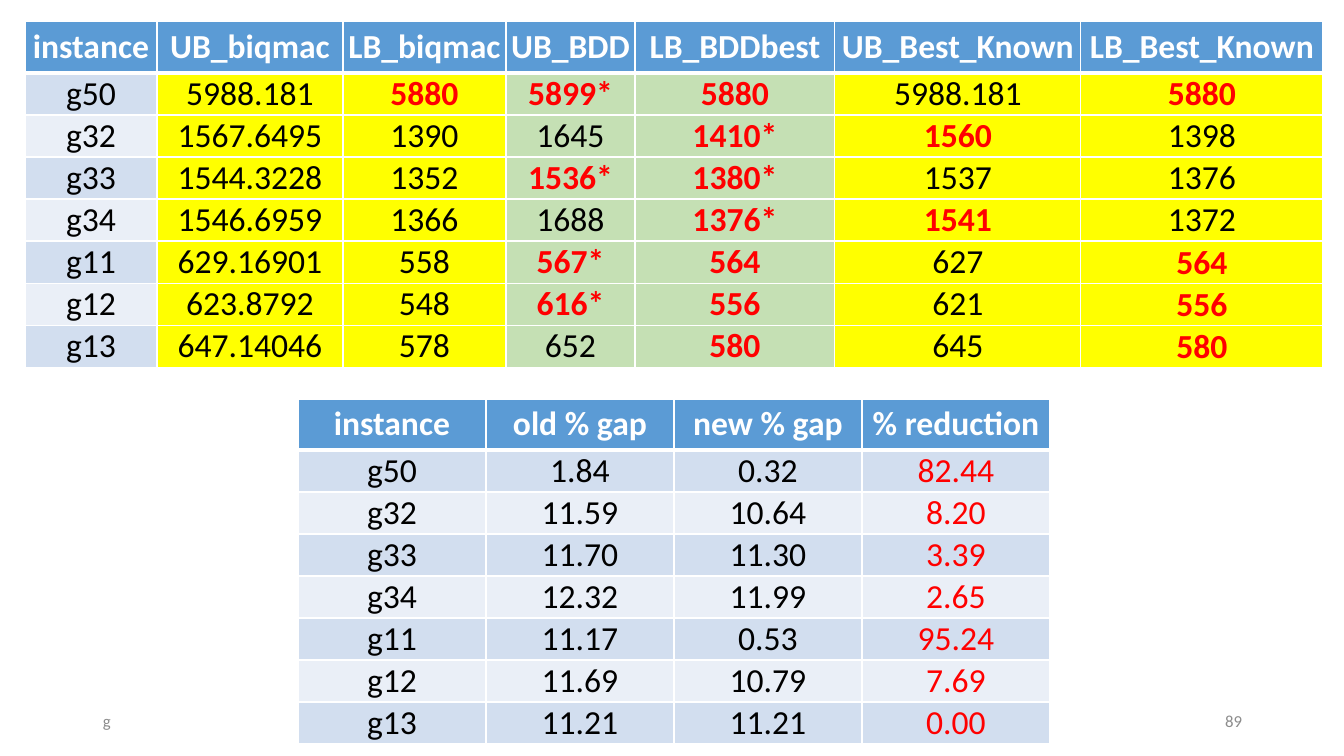
from dataclasses import dataclass

from lxml.etree import SubElement
from pptx import Presentation
from pptx.dml.color import RGBColor
from pptx.enum.text import MSO_ANCHOR, PP_ALIGN
from pptx.oxml.ns import qn
from pptx.util import Pt

# Each row: its values, then the columns that hold a best bound
BOUNDS_HEADER = ["instance", "UB_biqmac", "LB_biqmac", "UB_BDD", "LB_BDDbest",
                 "UB_Best_Known", "LB_Best_Known"]
BOUNDS = [
    (["g50", "5988.181", "5880", "5899*", "5880", "5988.181", "5880"], {2, 3, 4, 6}),
    (["g32", "1567.6495", "1390", "1645", "1410*", "1560", "1398"], {4, 5}),
    (["g33", "1544.3228", "1352", "1536*", "1380*", "1537", "1376"], {3, 4}),
    (["g34", "1546.6959", "1366", "1688", "1376*", "1541", "1372"], {4, 5}),
    (["g11", "629.16901", "558", "567*", "564", "627", "564"], {3, 4, 6}),
    (["g12", "623.8792", "548", "616*", "556", "621", "556"], {3, 4, 6}),
    (["g13", "647.14046", "578", "652", "580", "645", "580"], {4, 6}),
]
GAPS_HEADER = ["instance", "old % gap", "new % gap", "% reduction"]
GAPS = [
    ["g50", "1.84", "0.32", "82.44"],
    ["g32", "11.59", "10.64", "8.20"],
    ["g33", "11.70", "11.30", "3.39"],
    ["g34", "12.32", "11.99", "2.65"],
    ["g11", "11.17", "0.53", "95.24"],
    ["g12", "11.69", "10.79", "7.69"],
    ["g13", "11.21", "11.21", "0.00"],
]
FOOTERS = [("g", 93, PP_ALIGN.LEFT), ("89", 950, PP_ALIGN.RIGHT)]

SLIDE_SIZE = (1344, 756)
BOUNDS_COLUMNS = [132, 186, 163, 129, 200, 246, 242]
GAPS_COLUMNS = [188] * 4
ROW_HEIGHT = 42


@dataclass(frozen=True)
class Theme:
    font: str = "Calibri"
    table_size: int = 24
    footer_size: int = 12
    header: str = "5B9BD5"
    bands: tuple = ("D2DEEF", "EAEFF7")
    known: str = "FFFF00"
    bdd: str = "C5E0B4"
    light: str = "FFFFFF"
    dark: str = "000000"
    best: str = "FF0000"
    footer: str = "8C8C8C"


THEME = Theme()


def px(length):
    return round(length * 914400 / 100.8)


def write(frame, text, size, color, align, bold=False):
    paragraph = frame.paragraphs[0]
    paragraph.alignment = align
    run = paragraph.add_run()
    run.text = text
    run.font.color.rgb = RGBColor.from_string(color)
    for name, value in {"name": THEME.font, "size": Pt(size), "bold": bold}.items():
        setattr(run.font, name, value)


def draw_borders(cell, top, bottom):
    properties = cell._tc.get_or_add_tcPr()
    for side, width in {"lnL": 1, "lnR": 1, "lnT": top, "lnB": bottom}.items():
        line = SubElement(properties, qn(f"a:{side}"), w=str(Pt(width)))
        fill = SubElement(line, qn("a:solidFill"))
        SubElement(fill, qn("a:srgbClr"), val=THEME.light)


def add_grid(slide, left, top, columns, header_height, rows, style):
    """Draw a table; style(row, column) gives fill, text colour, bold and cell format."""
    heights = [header_height] + [ROW_HEIGHT] * (len(rows) - 1)
    table = slide.shapes.add_table(
        len(rows), len(columns), px(left), px(top), px(sum(columns)), px(sum(heights))).table
    table.first_row = table.horz_banding = False
    for column, width in zip(table.columns, columns):
        column.width = px(width)
    for r, (values, height) in enumerate(zip(rows, heights)):
        table.rows[r].height = px(height)
        for c, value in enumerate(values):
            cell = table.cell(r, c)
            fill, color, bold, cell_format = style(r, c)
            draw_borders(cell, 3 if r == 1 else 1, 3 if r == 0 else 1)
            cell.fill.solid()
            cell.fill.fore_color.rgb = RGBColor.from_string(fill)
            for name, setting in cell_format.items():
                setattr(cell, name, setting)
            write(cell.text_frame, value, THEME.table_size, color, PP_ALIGN.CENTER, bold)


def tight(anchor, inset=0):
    return {"margin_left": px(inset), "margin_top": px(inset), "margin_right": px(inset),
            "margin_bottom": 0, "vertical_anchor": anchor}


def band(row):
    return THEME.bands[(row - 1) % 2]


def bounds_style(row, column):
    cell_format = tight(MSO_ANCHOR.MIDDLE, 1 if column == 6 else 0)
    if row == 0:
        return THEME.header, THEME.light, True, cell_format
    fill = band(row) if column == 0 else THEME.bdd if column in (3, 4) else THEME.known
    best = column in BOUNDS[row - 1][1]
    return fill, THEME.best if best else THEME.dark, best, cell_format


def gaps_style(row, column):
    if row == 0:
        return THEME.header, THEME.light, True, {}
    cell_format = tight(MSO_ANCHOR.BOTTOM, 1) if column else tight(MSO_ANCHOR.MIDDLE)
    return band(row), THEME.best if column == 3 else THEME.dark, False, cell_format


def add_footer(slide, text, left, align):
    frame = slide.shapes.add_textbox(px(left), px(701), px(302), px(40)).text_frame
    frame.word_wrap = True
    frame.vertical_anchor = MSO_ANCHOR.MIDDLE
    write(frame, text, THEME.footer_size, THEME.footer, align)


def main():
    deck = Presentation()
    deck.slide_width, deck.slide_height = map(px, SLIDE_SIZE)
    slide = deck.slides.add_slide(deck.slide_layouts[6])
    bounds_rows = [BOUNDS_HEADER] + [values for values, _ in BOUNDS]
    add_grid(slide, 25, 21, BOUNDS_COLUMNS, 52, bounds_rows, bounds_style)
    for footer in FOOTERS:
        add_footer(slide, *footer)
    add_grid(slide, 298, 399, GAPS_COLUMNS, 51, [GAPS_HEADER] + GAPS, gaps_style)
    deck.save("out.pptx")


if __name__ == "__main__":
    main()
